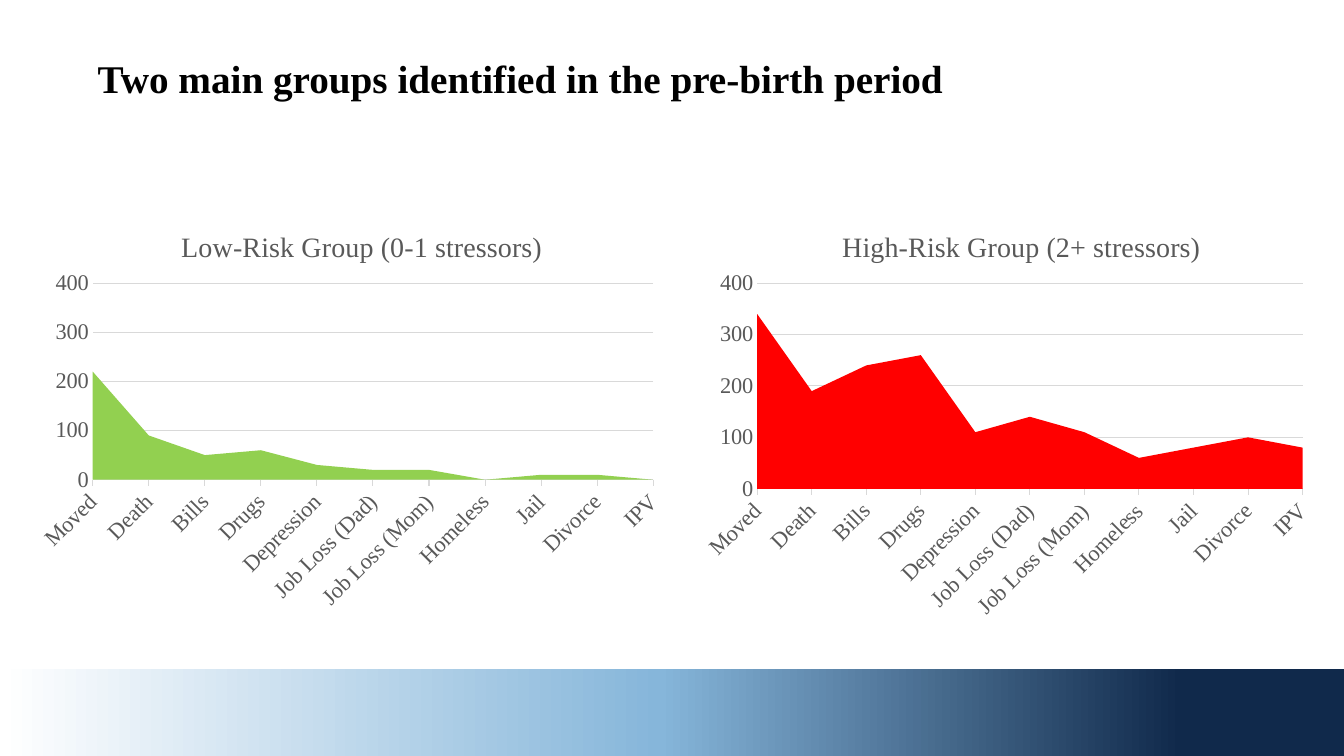
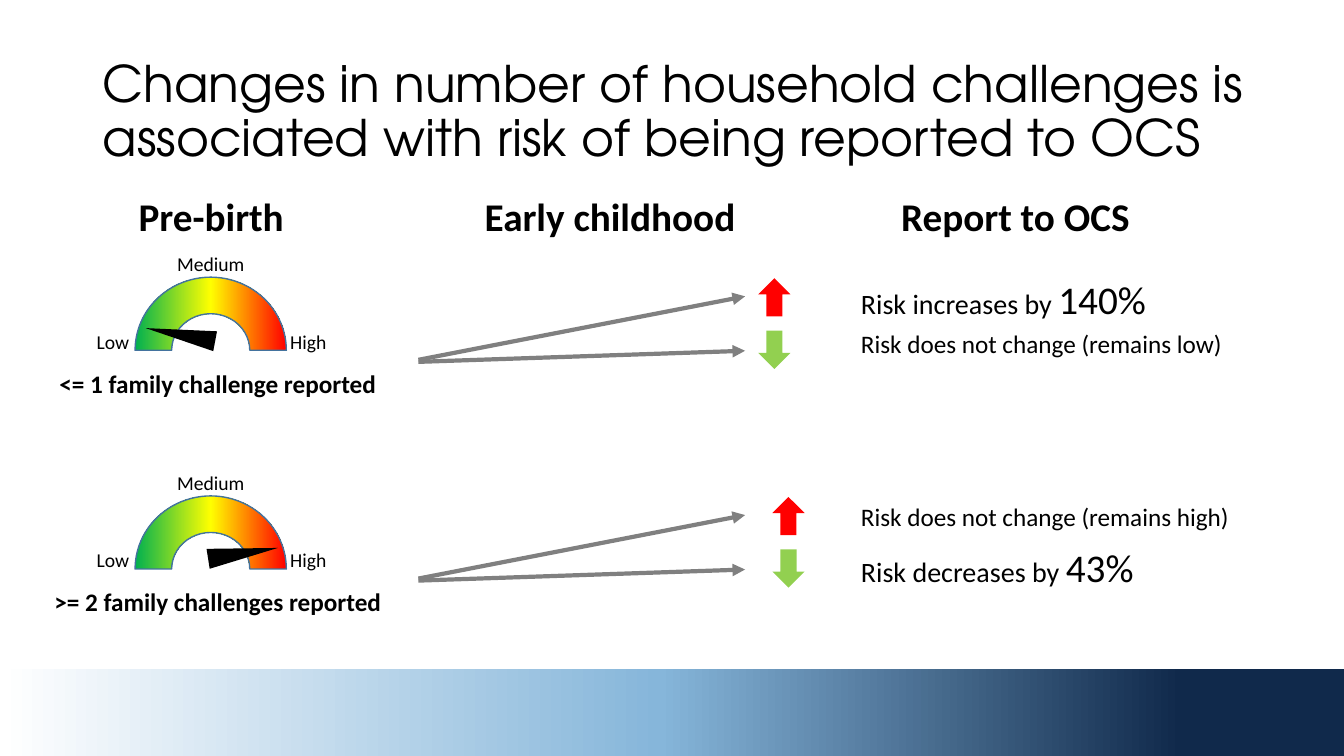
from dataclasses import dataclass

from lxml import etree
from pptx import Presentation
from pptx.chart.data import CategoryChartData
from pptx.dml.color import RGBColor
from pptx.enum import chart as charts, shapes, text
from pptx.oxml import ns
from pptx.util import Inches, Pt

SHAPE = shapes.MSO_SHAPE
ALIGN = text.PP_ALIGN
ANCHOR = text.MSO_ANCHOR


@dataclass(frozen=True)
class Theme:
    black: str = "000000"
    gray: str = "808080"
    chart_text: str = "595959"
    grid: str = "D9D9D9"
    red: str = "FF0000"
    green: str = "92D050"
    gauge_line: str = "43739E"
    gauge_stops: tuple = ((0, "00B050"), (50, "FFFF00"), (100, "FF0000"))
    band_stops: tuple = ((0, "FFFFFF"), (49, "86B6DA"), (88, "10294B"))
    body: str = "Calibri"
    serif: str = "Times New Roman"
    display: str = "TeX Gyre Adventor"
    title_size: int = 36
    heading_size: int = 28
    chart_title_size: int = 20
    lead_size: int = 20
    text_size: int = 18
    axis_size: int = 16
    label_size: int = 14


THEME = Theme()


def add_xml(parent, tag, **attributes):
    element = etree.SubElement(parent, ns.qn(tag))
    for name, value in attributes.items():
        element.set(name, str(value))
    return element


def style_font(font, **values):
    """Apply size in points, colour as RRGGBB and any other font attribute."""
    size = values.pop("size", None)
    color = values.pop("color", None)
    for name, value in values.items():
        setattr(font, name, value)
    if size:
        font.size = Pt(size)
    if color:
        font.color.rgb = RGBColor.from_string(color)


def style_line(line, color, width):
    line.color.rgb = RGBColor.from_string(color)
    line.width = Pt(width)


def place_in_chart(element, position, inner=False):
    """Give a chart part a fixed place, in fractions of the chart."""
    layout = element.find(ns.qn("c:layout"))
    if layout is None:
        layout = add_xml(element, "c:layout")
        text_part = element.find(ns.qn("c:tx"))
        element.insert(0 if text_part is None else 1, layout)
    for child in list(layout):
        layout.remove(child)
    manual = add_xml(layout, "c:manualLayout")
    if inner:
        add_xml(manual, "c:layoutTarget", val="inner")
    for name in ("xMode", "yMode"):
        add_xml(manual, f"c:{name}", val="edge")
    for name, value in position.items():
        add_xml(manual, f"c:{name}", val=round(value, 4))


class Deck:
    def __init__(self):
        self.presentation = Presentation()
        self.presentation.slide_width = Inches(13.33)
        self.presentation.slide_height = Inches(7.5)
        self.slide = None

    def start_slide(self):
        self.slide = self.presentation.slides.add_slide(self.presentation.slide_layouts[6])
        self.shape(SHAPE.RECTANGLE, 0, 6.64, 13.33, 0.86, THEME.band_stops)

    def shape(self, kind, left, top, width, height, fill, line=None, rotation=0):
        """Draw a preset shape; fill is a colour or a tuple of gradient stops."""
        shape = self.slide.shapes.add_shape(
            kind, Inches(left), Inches(top), Inches(width), Inches(height))
        shape.shadow.inherit = False
        shape.rotation = rotation
        if isinstance(fill, str):
            shape.fill.solid()
            shape.fill.fore_color.rgb = RGBColor.from_string(fill)
        else:
            self.fill_gradient(shape, fill)
        if line:
            style_line(shape.line, line, 1)
        else:
            shape.line.fill.background()

    @staticmethod
    def fill_gradient(shape, stops):
        shape.fill.gradient()
        shape.fill.gradient_angle = 0
        stop_list = shape.element.spPr.find(".//" + ns.qn("a:gsLst"))
        for stop in list(stop_list):
            stop_list.remove(stop)
        for percent, color in stops:
            stop = add_xml(stop_list, "a:gs", pos=percent * 1000)
            add_xml(stop, "a:srgbClr", val=color)

    def text(self, runs, left, top, width, height, align=ALIGN.LEFT,
             anchor=ANCHOR.TOP, spacing=1.0, font=THEME.body, bold=False):
        """Write one paragraph from (text, size) runs."""
        box = self.slide.shapes.add_textbox(
            Inches(left), Inches(top), Inches(width), Inches(height))
        frame = box.text_frame
        frame.word_wrap = True
        frame.vertical_anchor = anchor
        paragraph = frame.paragraphs[0]
        paragraph.alignment = align
        paragraph.line_spacing = spacing
        for content, size in runs:
            run = paragraph.add_run()
            run.text = content
            style_font(run.font, name=font, size=size, color=THEME.black, bold=bold)

    def arrow(self, start, end):
        points = [Inches(value) for value in (*start, *end)]
        connector = self.slide.shapes.add_connector(shapes.MSO_CONNECTOR.STRAIGHT, *points)
        style_line(connector.line, THEME.gray, 3)
        line = connector.element.spPr.find(ns.qn("a:ln"))
        add_xml(line, "a:tailEnd", type="triangle")
        add_xml(connector.element.spPr, "a:effectLst")

    def area_chart(self, title, categories, values, color, left, top, width, height):
        data = CategoryChartData()
        data.categories = categories
        data.add_series("Series 1", values)
        chart = self.slide.shapes.add_chart(
            charts.XL_CHART_TYPE.AREA, Inches(left), Inches(top),
            Inches(width), Inches(height), data).chart
        chart.has_legend = False
        style_font(chart.font, name=THEME.serif, size=THEME.axis_size, color=THEME.chart_text)

        plot = chart.plots[0]
        plot.vary_by_categories = False
        fill = plot.series[0].format.fill
        fill.solid()
        fill.fore_color.rgb = RGBColor.from_string(color)

        chart.has_title = True
        paragraph = chart.chart_title.text_frame.paragraphs[0]
        run = paragraph.add_run()
        run.text = title
        style_font(run.font, name=THEME.serif, size=THEME.chart_title_size,
                   color=THEME.chart_text, bold=False)

        self.style_axes(chart)
        chart_part = chart.element.find(ns.qn("c:chart"))
        place_in_chart(chart_part.find(ns.qn("c:title")), {"x": 0.23, "y": 0.05})
        margin_left, margin_top, margin_right, margin_bottom = 0.65, 0.8, 0.21, 1.38
        place_in_chart(chart_part.find(ns.qn("c:plotArea")), {
            "x": margin_left / width,
            "y": margin_top / height,
            "w": 1 - (margin_left + margin_right) / width,
            "h": 1 - (margin_top + margin_bottom) / height,
        }, inner=True)

    @staticmethod
    def style_axes(chart):
        category_axis, value_axis = chart.category_axis, chart.value_axis
        for axis in (category_axis, value_axis):
            style_font(axis.tick_labels.font, name=THEME.serif,
                       size=THEME.axis_size, color=THEME.chart_text)
            axis.minor_tick_mark = charts.XL_TICK_MARK.NONE
        category_axis.has_major_gridlines = False
        category_axis.major_tick_mark = charts.XL_TICK_MARK.OUTSIDE
        style_line(category_axis.format.line, THEME.grid, 0.75)
        label_body = chart.element.find(f".//{ns.qn('c:catAx')}//{ns.qn('a:bodyPr')}")
        label_body.set("rot", "-2700000")
        limits = {"minimum_scale": 0, "maximum_scale": 400, "major_unit": 100,
                  "major_tick_mark": charts.XL_TICK_MARK.NONE, "has_major_gridlines": True}
        for name, value in limits.items():
            setattr(value_axis, name, value)
        style_line(value_axis.major_gridlines.format.line, THEME.grid, 0.75)
        value_axis.format.line.fill.background()
        for crossing in chart.element.iter(ns.qn("c:crossBetween")):
            crossing.set("val", "midCat")

    def gauge(self, top, needle_left, needle_angle, caption):
        self.shape(SHAPE.BLOCK_ARC, 1.34, top, 1.5, 1.45, THEME.gauge_stops, THEME.gauge_line)
        labels = [("Medium", 1.55, -0.3, 1.08, ALIGN.CENTER),
                  ("Low", 0.3, 0.47, 1.08, ALIGN.RIGHT),
                  ("High", 2.78, 0.47, 0.65, ALIGN.LEFT)]
        for label, left, offset, width, align in labels:
            self.text([(label, THEME.label_size)], left, top + offset, width, 0.34, align)
        self.shape(SHAPE.ISOSCELES_TRIANGLE, needle_left, top + 0.22, 0.2, 0.7,
                   THEME.black, rotation=needle_angle)
        self.text([(caption, THEME.text_size)], 0.2, top + 0.85, 3.92, 0.4,
                  ALIGN.CENTER, bold=True)

    def changes(self, top, marker_left, outcomes):
        """Draw the rising and falling branch with their outcomes."""
        branches = [(0.82, 0.19, 0.01, THEME.red, 0), (0.84, 0.73, 0.53, THEME.green, 180)]
        for branch, (text_offset, runs) in zip(branches, outcomes):
            start, end, marker, color, rotation = branch
            self.arrow((4.15, top + start), (7.39, top + end))
            self.shape(SHAPE.UP_ARROW, marker_left, top + marker, 0.32, 0.38,
                       color, rotation=rotation)
            self.text(runs, 8.44, top + text_offset, 4.33, 0.5)


def build_groups_slide(deck):
    deck.start_slide()
    deck.text([("Two main groups identified in the pre-birth period", THEME.heading_size)],
              0.87, 0.49, 12.16, 0.57, font=THEME.serif, bold=True)
    stressors = ["Moved", "Death", "Bills", "Drugs", "Depression", "Job Loss (Dad)",
                 "Job Loss (Mom)", "Homeless", "Jail", "Divorce", "IPV"]
    deck.area_chart("Low-Risk Group (0-1 stressors)", stressors,
                    [220, 90, 50, 60, 30, 20, 20, 0, 10, 10, 0],
                    THEME.green, 0.27, 2.01, 6.42, 4.13)
    deck.area_chart("High-Risk Group (2+ stressors)", stressors,
                    [340, 190, 240, 260, 110, 140, 110, 60, 80, 100, 80],
                    THEME.red, 6.86, 2.01, 6.27, 4.22)


def build_changes_slide(deck):
    deck.start_slide()
    deck.text([("Changes in number of household challenges is associated with risk "
                "of being reported to OCS", THEME.title_size)],
              0.92, 0.4, 11.82, 1.45, anchor=ANCHOR.MIDDLE, spacing=0.9, font=THEME.display)
    headings = [("Pre-birth", 0.66, 2.87), ("Early childhood", 3.87, 4.36),
                ("Report to OCS", 8.25, 3.64)]
    for heading, left, width in headings:
        deck.text([(heading, THEME.heading_size)], left, 1.86, width, 0.57,
                  ALIGN.CENTER, bold=True)

    low_top, high_top = 2.75, 4.92
    deck.gauge(low_top, 1.69, 280.7, "<= 1 family challenge reported")
    deck.changes(low_top, 7.52, [
        (-0.07, [("Risk increases by ", THEME.lead_size), ("140%", THEME.heading_size)]),
        (0.46, [("Risk does not change (remains low)", THEME.text_size)]),
    ])
    deck.gauge(high_top, 2.31, 81.1, ">= 2 family challenges reported")
    deck.changes(high_top, 7.66, [
        (0, [("Risk does not change (remains high)", THEME.text_size)]),
        (0.42, [("Risk decreases by ", THEME.lead_size), ("43%", THEME.heading_size)]),
    ])


def main():
    deck = Deck()
    build_groups_slide(deck)
    build_changes_slide(deck)
    deck.presentation.save("out.pptx")


if __name__ == "__main__":
    main()
